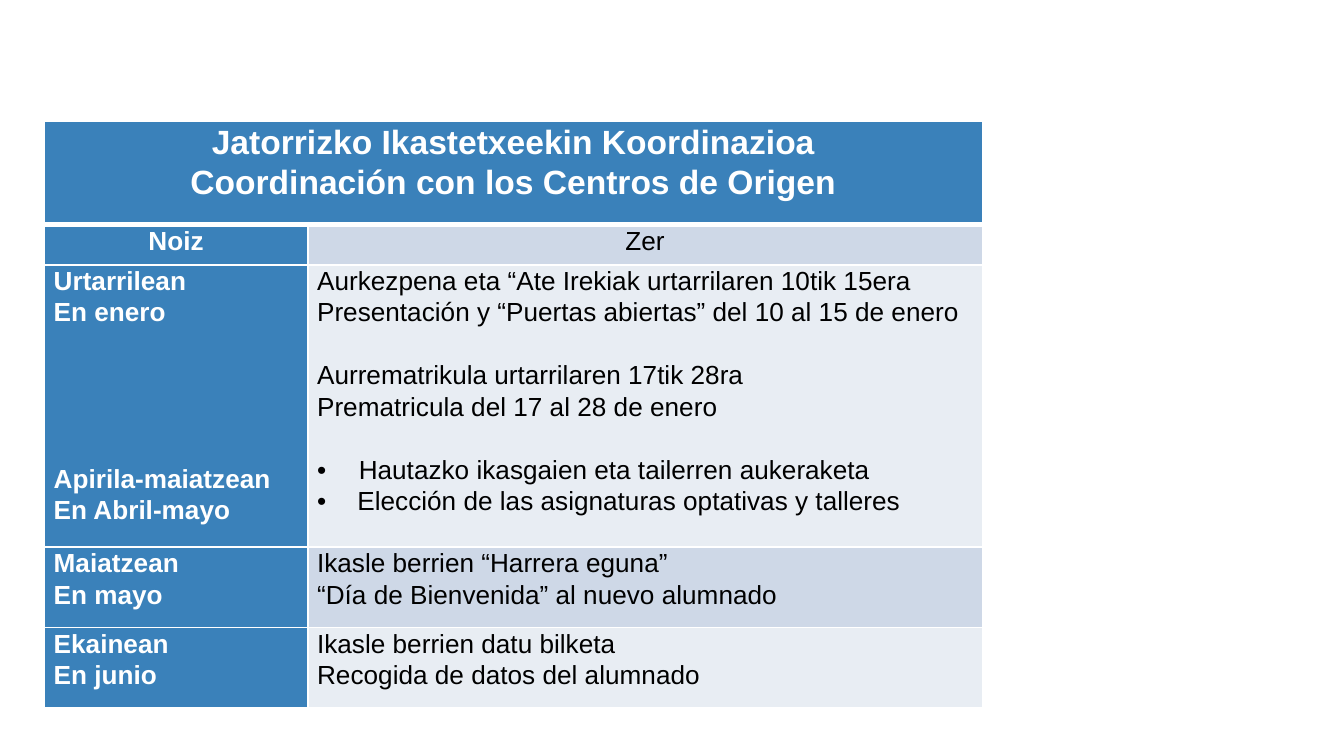
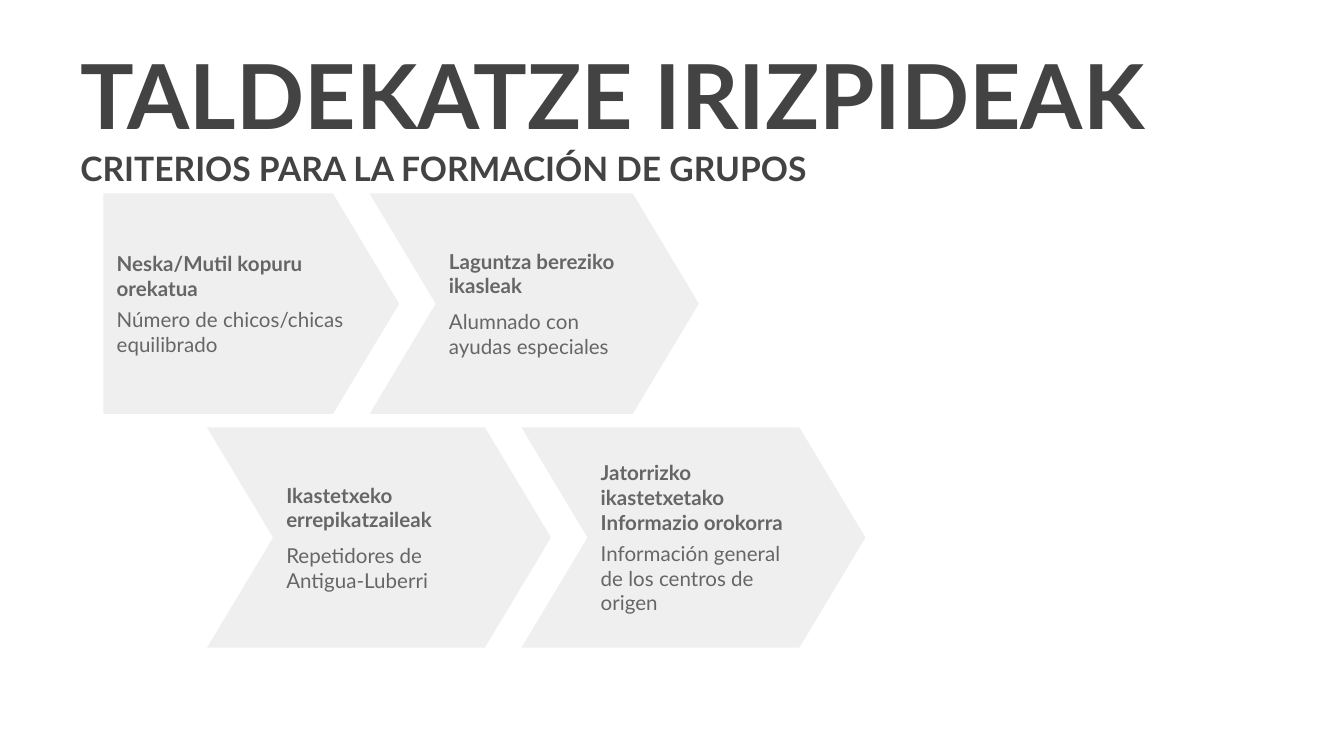
"""Build two slides: a school coordination table and the grouping criteria."""
from lxml import etree
from pptx import Presentation
from pptx import util as u
from pptx.dml import color
from pptx.enum import shapes, text
from pptx.oxml import ns

BLUE, PALE, LIGHT = "3A81BA", "CED8E7", "E8EDF3"
WHITE, BLACK = "FFFFFF", "000000"
GREY, DARK, MID = "EFEFEF", "434343", "666666"
ARIAL, LATO = "Arial", "Lato"
LINE = 17

HEAD = ["Jatorrizko Ikastetxeekin Koordinazioa",
        "Coordinación con los Centros de Origen"]
ROWS = [
    (["Noiz"], ["Zer"]),
    (["Urtarrilean", "En enero", "Apirila-maiatzean", "En Abril-mayo"],
     ["Aurkezpena eta “Ate Irekiak urtarrilaren 10tik 15era",
      "Presentación y “Puertas abiertas” del 10 al 15 de enero",
      "Aurrematrikula urtarrilaren 17tik 28ra",
      "Prematricula del 17 al 28 de enero",
      "Hautazko ikasgaien eta tailerren aukeraketa",
      "Elección de las asignaturas optativas y talleres"]),
    (["Maiatzean", "En mayo"],
     ["Ikasle berrien “Harrera eguna”",
      "“Día de Bienvenida” al nuevo alumnado"]),
    (["Ekainean", "En junio"],
     ["Ikasle berrien datu bilketa", "Recogida de datos del alumnado"]),
]
GAPS = {"Apirila-maiatzean": 4.25 * LINE,
        ROWS[1][1][2]: LINE, ROWS[1][1][4]: LINE}
DOTS = {ROWS[1][1][4]: 0.31, ROWS[1][1][5]: 0.3}

STEPS = [
    (0.77, 0, 2.2, 3.6, "Neska/Mutil kopuru orekatua",
     "Número de chicos/chicas equilibrado"),
    (2.75, 0, 2.45, 6, "Laguntza bereziko ikasleak",
     "Alumnado con ayudas especiales"),
    (1.54, 1, 2.56, 6, "Ikastetxeko errepikatzaileak",
     "Repetidores de Antigua-Luberri"),
    (3.88, 1, 2.56, 3.6, "Jatorrizko ikastetxetako Informazio orokorra",
     "Información general de los centros de origen"),
]


def rgb(tone):
    """Turn a hex string into a colour."""
    return color.RGBColor.from_string(tone)


def node(root, tag, **attrs):
    """Add a drawing element below root."""
    return etree.SubElement(root, ns.qn("a:" + tag), **attrs)


def add_run(para, words, face, size, tone, bold):
    """Add one styled run to a paragraph."""
    run = para.add_run()
    run.text = words
    font = run.font
    font.name, font.size, font.bold = face, u.Pt(size), bold
    font.color.rgb = rgb(tone)


def get_para(frame, num):
    """Return the first paragraph, or append a new one."""
    return frame.add_paragraph() if num else frame.paragraphs[0]


def set_frame(frame, anchor):
    """Set wrapping, anchor and equal insets."""
    frame.word_wrap = True
    frame.vertical_anchor = anchor
    frame.margin_left = frame.margin_right = u.Inches(0.1)
    frame.margin_top = frame.margin_bottom = u.Inches(0.1)


def add_dot(para, hang):
    """Give a paragraph a hanging bullet."""
    props = para._p.get_or_add_pPr()
    props.set("marL", str(u.Inches(hang)))
    props.set("indent", str(-u.Inches(hang)))
    node(node(props, "buClr"), "srgbClr", val=BLACK)
    node(props, "buFont", typeface=ARIAL)
    node(props, "buChar", char="•")


def add_edges(cell, top=1, low=1):
    """Draw white borders around a cell."""
    props = cell._tc.get_or_add_tcPr()
    for side, wide in zip("LRTB", (1, 1, top, low)):
        line = node(props, "ln" + side, w=str(u.Pt(wide)))
        node(node(line, "solidFill"), "srgbClr", val=WHITE)


def fill_cell(cell, lines, fill, size=14, mid=False, top=1, low=1):
    """Fill a cell with a colour and its lines of text."""
    add_edges(cell, top, low)
    cell.fill.solid()
    cell.fill.fore_color.rgb = rgb(fill)
    cell.margin_left = cell.margin_right = u.Inches(0.07)
    cell.margin_top = cell.margin_bottom = 0
    main = fill == BLUE
    for num, words in enumerate(lines):
        para = get_para(cell.text_frame, num)
        if words in DOTS:
            add_dot(para, DOTS[words])
        para.line_spacing = 1.07
        if words in GAPS:
            para.space_before = u.Pt(GAPS[words])
        if mid:
            para.alignment = text.PP_ALIGN.CENTER
        add_run(para, words, ARIAL, size, WHITE if main else BLACK, main)


def add_plan(slide, left, top, wide):
    """Place the coordination table."""
    highs = [0.77, 0.3, 2.1, 0.6, 0.6]
    table = slide.shapes.add_table(
        len(highs), 2, u.Inches(left), u.Inches(top),
        u.Inches(wide), u.Inches(sum(highs))).table
    table.first_row = table.horz_banding = False
    for col, share in zip(table.columns, (1.96, wide - 1.96)):
        col.width = u.Inches(share)
    for row, high in zip(table.rows, highs):
        row.height = u.Inches(high)
    table.cell(0, 0).merge(table.cell(0, 1))
    fill_cell(table.cell(0, 0), HEAD, BLUE, 18, True, low=3)
    add_edges(table.cell(0, 1), low=3)
    for num, (when, what) in enumerate(ROWS, 1):
        first = num == 1
        top_line = 3 if first else 1
        fill_cell(table.cell(num, 0), when, BLUE, mid=first, top=top_line)
        fill_cell(table.cell(num, 1), what, PALE if num % 2 else LIGHT,
                  mid=first, top=top_line)


def add_title(slide, left, top, wide, high):
    """Place the title and its smaller second line."""
    box = slide.shapes.add_textbox(*map(u.Inches, (left, top, wide, high)))
    set_frame(box.text_frame, text.MSO_ANCHOR.BOTTOM)
    lines = [("TALDEKATZE IRIZPIDEAK", 48),
             ("CRITERIOS PARA LA FORMACIÓN DE GRUPOS", 18)]
    for num, (words, size) in enumerate(lines):
        add_run(get_para(box.text_frame, num), words, LATO, size, DARK, True)


def add_step(slide, kind, left, top, wide, high, gap, lines):
    """Place one arrow with a bold line and a plain line."""
    step = slide.shapes.add_shape(
        kind, *map(u.Inches, (left, top, wide, high)))
    step.adjustments[0] = 0.3
    step.shadow.inherit = False
    step.fill.solid()
    step.fill.fore_color.rgb = rgb(GREY)
    step.line.fill.background()
    set_frame(step.text_frame, text.MSO_ANCHOR.MIDDLE)
    for num, words in enumerate(lines):
        para = get_para(step.text_frame, num)
        para.alignment = text.PP_ALIGN.LEFT
        if num:
            para.space_before = u.Pt(gap)
        add_run(para, words, LATO, 11, MID, not num)


def add_steps(slide, top, high, pitch):
    """Place the two rows of arrows."""
    kinds = shapes.MSO_SHAPE
    for num, (left, row, wide, gap, *lines) in enumerate(STEPS):
        kind = kinds.CHEVRON if num else kinds.PENTAGON
        add_step(slide, kind, left, top + row * pitch, wide, high, gap, lines)


def main():
    """Build and save the deck."""
    deck = Presentation()
    deck.slide_width = u.Inches(10)
    deck.slide_height = u.Inches(10 * 9 / 16)
    blank = deck.slide_layouts[6]
    add_plan(deck.slides.add_slide(blank), 0.33, 0.9, 6.98)
    slide = deck.slides.add_slide(blank)
    add_title(slide, 0.5, 0.56, 8.88, 0.94)
    add_steps(slide, 1.44, 1.64, 1.74)
    deck.save("out.pptx")


if __name__ == "__main__":
    main()
